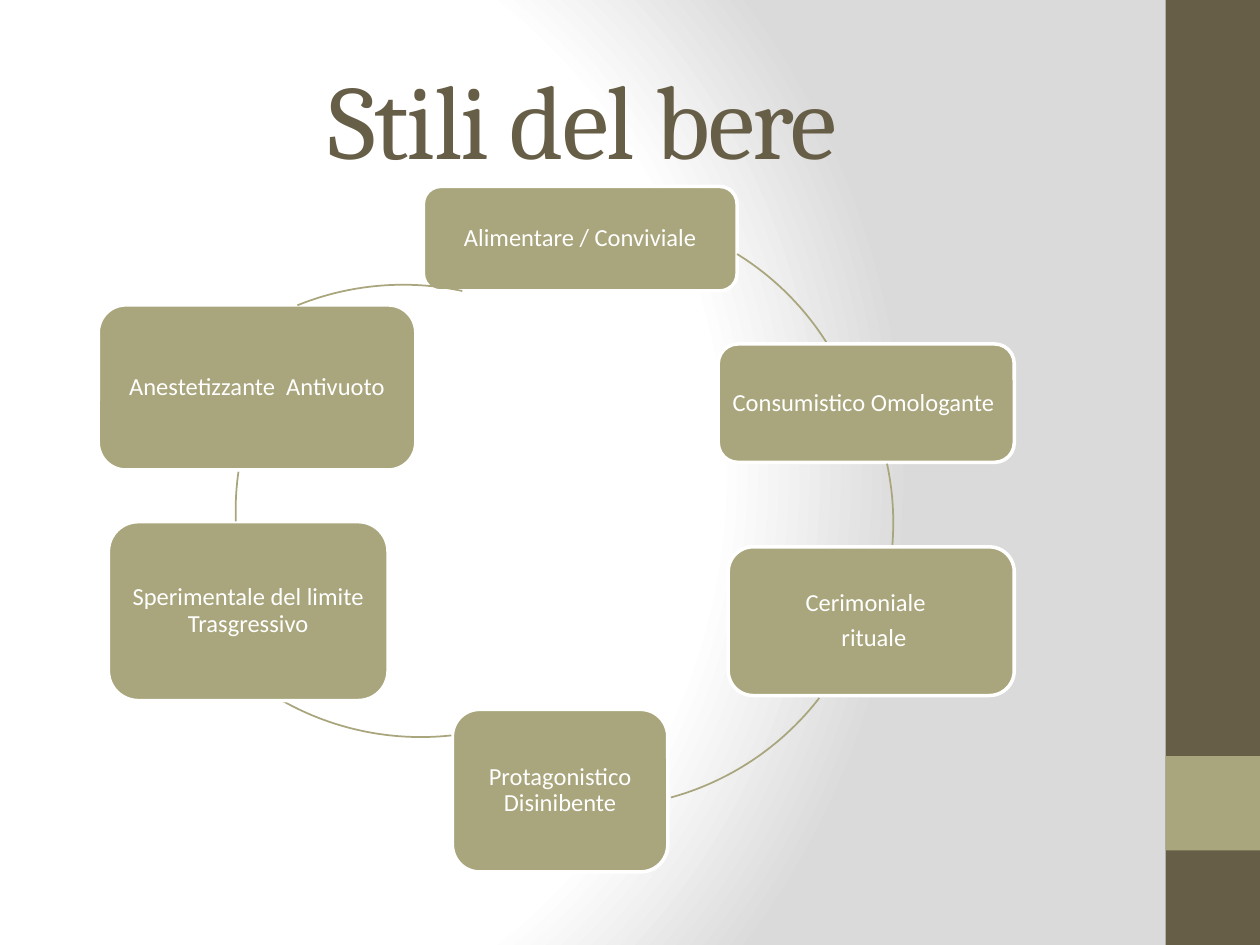
import dataclasses
import lxml.etree
import pptx
import pptx.dml.color
import pptx.enum.shapes
import pptx.enum.text
import pptx.oxml
import pptx.oxml.ns
import pptx.util

Inches = pptx.util.Inches
Pt = pptx.util.Pt
SHAPE = pptx.enum.shapes.MSO_SHAPE
MIDDLE = pptx.enum.text.MSO_ANCHOR.MIDDLE
CENTER = pptx.enum.text.PP_ALIGN.CENTER
COLORS = {"dark": "675E47", "olive": "A9A57C", "white": "FFFFFF", "grey": "DADADA"}
RING = 4.48  # diameter of the circle behind every arc


@dataclasses.dataclass
class Style:
    """A drinking style: its box and the arc leading to the next one."""
    lines: list[str]
    box: tuple[float, float, float, float]
    ring: tuple[float, float]  # left and top of the arc's circle
    start: float  # degrees, clockwise from the right
    end: float


STYLES = [
    Style(["Alimentare / Conviviale"], (3.36, 1.48, 2.49, 0.83), (2.43, 1.68), 301.8, 327.8),
    Style(["Consumistico Omologante "], (5.7, 2.73, 2.35, 0.94), (2.61, 1.91), 347.9, 4.6),
    Style(["Cerimoniale  ", " rituale"], (5.78, 4.34, 2.27, 1.18), (2.49, 1.93), 37.7, 74.6),
    Style(["Protagonistico Disinibente"], (3.59, 5.63, 1.71, 1.29), (1.1, 1.37), 83.8, 119.2),
    Style(["Sperimentale del limite Trasgressivo"], (0.86, 4.14, 2.22, 1.42), (1.87, 1.82), 178, 188.2),
    Style(["Anestetizzante  Antivuoto"], (0.78, 2.42, 2.52, 1.31), (0.96, 2.26), 248, 282.1),
]


def color(name: str):
    return pptx.dml.color.RGBColor.from_string(COLORS[name])


def add(slide, kind, left: float, top: float, width: float, height: float, fill: str = ""):
    shape = slide.shapes.add_shape(kind, Inches(left), Inches(top), Inches(width), Inches(height))
    shape.shadow.inherit = False
    shape.line.fill.background()
    if fill:
        shape.fill.solid()
        shape.fill.fore_color.rgb = color(fill)
    else:
        shape.fill.background()
    return shape


def outline(shape, name: str, width: float) -> None:
    shape.line.color.rgb = color(name)
    shape.line.width = Pt(width)


def set_font(par, name: str, size: float, tint: str) -> None:
    par.alignment = CENTER
    par.font.name = name
    par.font.size = Pt(size)
    par.font.color.rgb = color(tint)


def draw_box(slide, style: Style) -> None:
    box = add(slide, SHAPE.ROUNDED_RECTANGLE, *style.box, fill="olive")
    outline(box, "white", 2)
    frame = box.text_frame
    frame.word_wrap = True
    frame.vertical_anchor = MIDDLE
    frame.margin_left = frame.margin_right = Inches(0.06)
    frame.margin_top = frame.margin_bottom = Inches(0.06)
    frame.text = "\n".join(style.lines)
    for par in frame.paragraphs:
        set_font(par, "Calibri", 14, "white")
        par.line_spacing = 0.9
        par.space_after = Pt(5)


def draw_arc(slide, style: Style) -> None:
    arc = add(slide, SHAPE.ARC, *style.ring, RING, RING)
    outline(arc, "olive", 1)
    # Angles count 60000 per degree, adjustments 100000 per unit
    arc.adjustments[0] = style.start * 0.6
    arc.adjustments[1] = style.end * 0.6


def paint_back(slide) -> None:
    fill = slide.background.fill
    fill.gradient()
    stops = "".join(
        f'<a:gs pos="{pos * 1000}"><a:srgbClr val="{COLORS[name]}"/></a:gs>'
        for pos, name in [(0, "white"), (75, "white"), (100, "grey")])
    grad = pptx.oxml.parse_xml(
        f'<a:gradFill {pptx.oxml.ns.nsdecls("a")} rotWithShape="1"><a:gsLst>{stops}</a:gsLst>'
        '<a:path path="circle"><a:fillToRect l="20000" t="50000" r="100000" b="50000"/></a:path>'
        '</a:gradFill>')
    old = slide.background._cSld.find(".//" + pptx.oxml.ns.qn("a:gradFill"))
    old.getparent().replace(old, grad)


def draw_title(slide, text: str) -> None:
    title = slide.shapes.title
    title.left, title.top = Inches(0.55), Inches(0.31)
    title.width, title.height = Inches(8.15), Inches(1.25)
    title.text_frame.text = text
    title.text_frame.vertical_anchor = MIDDLE
    par = title.text_frame.paragraphs[0]
    set_font(par, "Cambria", 60, "dark")
    par.runs[0].font._element.set("spc", "-100")


def main() -> None:
    deck = pptx.Presentation()
    deck.slide_width, deck.slide_height = Inches(10), Inches(7.5)
    slide = deck.slides.add_slide(deck.slide_layouts[5])
    paint_back(slide)

    # Side band
    add(slide, SHAPE.RECTANGLE, 9.25, 0, 0.75, 7.5, "dark")
    add(slide, SHAPE.RECTANGLE, 9.25, 6, 0.75, 0.75, "olive")

    draw_title(slide, "Stili del bere")

    # Cycle of styles
    for style in STYLES:
        draw_box(slide, style)
        draw_arc(slide, style)

    deck.save("out.pptx")


if __name__ == "__main__":
    main()
